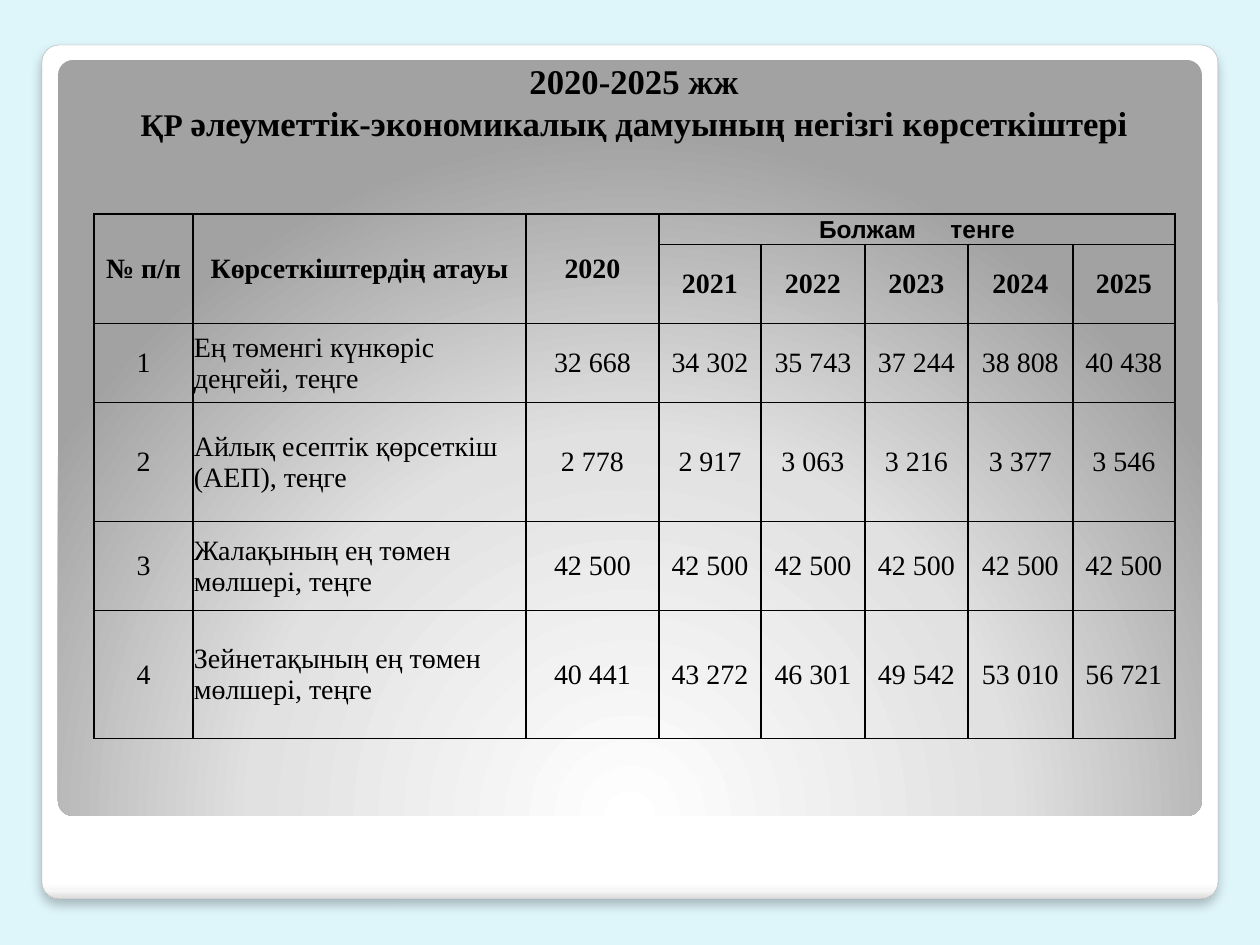
import pptx
import pptx.dml.color
import pptx.enum.shapes
import pptx.enum.text
import pptx.oxml
import pptx.oxml.ns
import pptx.util

px = 914400 // 126
namespace = pptx.oxml.ns.nsdecls("a")
center = pptx.enum.text.PP_ALIGN.CENTER
left = pptx.enum.text.PP_ALIGN.LEFT
middle = pptx.enum.text.MSO_ANCHOR.MIDDLE


def color(value):
    return pptx.dml.color.RGBColor.from_string(value)


def write(para, text, size, bold, name="Times New Roman"):
    span = para.add_run()
    span.text = text
    style = {"size": pptx.util.Pt(size), "bold": bold, "name": name}
    for key, value in style.items():
        setattr(span.font, key, value)
    span.font.color.rgb = color("000000")
    return span


deck = pptx.Presentation()
deck.slide_width = 1260 * px
deck.slide_height = 945 * px
page = deck.slides.add_slide(deck.slide_layouts[6])
page.background.fill.solid()
page.background.fill.fore_color.rgb = color("DEF5FA")

panels = [
    ((42, 45, 1176, 854),
     [(0, "FFFFFF"), (98, "FFFFFF"), (99, "F7F7F7"), (100, "DADADA")],
     '<a:lin ang="5400000" scaled="0"/>'),
    ((58, 60, 1144, 756),
     [(0, "FFFFFF"), (55, "E1E1E1"), (100, "A2A2A2")],
     '<a:path path="circle"><a:fillToRect l="50000" t="175000" r="50000" b="-75000"/></a:path>'),
]
shapes = []
for place, stops, direction in panels:
    panel = page.shapes.add_shape(
        pptx.enum.shapes.MSO_SHAPE.ROUNDED_RECTANGLE, *[value * px for value in place])
    panel.adjustments[0] = 0.02
    panel.shadow.inherit = False
    panel.line.fill.background()
    stop_xml = "".join(
        f'<a:gs pos="{position * 1000}"><a:srgbClr val="{shade}"/></a:gs>'
        for position, shade in stops)
    panel.element.spPr.insert(2, pptx.oxml.parse_xml(
        f'<a:gradFill {namespace} rotWithShape="1"><a:gsLst>{stop_xml}</a:gsLst>'
        f'{direction}</a:gradFill>'))
    shapes.append(panel)

frame = shapes[0]
frame.line.color.rgb = color("A4A4A4")
frame.line.width = pptx.util.Pt(0.16)
effects = frame.element.spPr.find(pptx.oxml.ns.qn("a:effectLst"))
effects.append(pptx.oxml.parse_xml(
    f'<a:outerShdw {namespace} blurRad="76200" dist="50800" dir="5400000" algn="tl" '
    'rotWithShape="0"><a:srgbClr val="000000"><a:alpha val="25000"/></a:srgbClr></a:outerShdw>'))

title = page.shapes.add_textbox(67 * px, 60 * px, 1134 * px, 84 * px).text_frame
title.word_wrap = True
for side in ("left", "right", "top", "bottom"):
    setattr(title, f"margin_{side}", 0)
title_lines = [
    [("2020-2025 жж", 19.8)],
    [("ҚР ", 18), ("әлеуметтік-экономикалық дамуының негізгі көрсеткіштері", 19.8)],
]
for index, pieces in enumerate(title_lines):
    para = title.add_paragraph() if index else title.paragraphs[0]
    para.alignment = center
    for text, size in pieces:
        write(para, text, size, True)

rows = [
    ["№ п/п", "Көрсеткіштердің атауы", "2020", "Болжам", "", "", "", ""],
    ["", "", "", "2021", "2022", "2023", "2024", "2025"],
    ["1", "Ең төменгі күнкөріс деңгейі, теңге",
     "32 668", "34 302", "35 743", "37 244", "38 808", "40 438"],
    ["2", "Айлық есептік қөрсеткіш (АЕП), теңге",
     "2 778", "2 917", "3 063", "3 216", "3 377", "3 546"],
    ["3", "Жалақының ең төмен мөлшері, теңге"] + ["42 500"] * 6,
    ["4", "Зейнетақының ең төмен мөлшері, теңге",
     "40 441", "43 272", "46 301", "49 542", "53 010", "56 721"],
]
widths = [99, 333, 133, 102, 104, 103, 105, 102]
heights = [29, 79, 79, 119, 89, 128]
holder = page.shapes.add_table(
    len(rows), len(widths), 94 * px, 214 * px, sum(widths) * px, sum(heights) * px)
table = holder.table
table.first_row = False
table.horz_banding = False
for column, width in zip(table.columns, widths):
    column.width = width * px
for row, height in zip(table.rows, heights):
    row.height = height * px

cell_format = {"margin_left": px, "margin_right": px, "margin_top": px,
               "margin_bottom": 0, "vertical_anchor": middle}
for row_index, texts in enumerate(rows):
    for column_index, text in enumerate(texts):
        cell = table.cell(row_index, column_index)
        for key, value in cell_format.items():
            setattr(cell, key, value)
        properties = cell._tc.get_or_add_tcPr()
        for edge in ("lnL", "lnR", "lnT", "lnB"):
            properties.append(pptx.oxml.parse_xml(
                f'<a:{edge} {namespace} w="12700"><a:solidFill>'
                f'<a:srgbClr val="000000"/></a:solidFill></a:{edge}>'))
        cell.fill.background()
        para = cell.text_frame.paragraphs[0]
        para.alignment = left if column_index == 1 and row_index > 1 else center
        if text == "Болжам":
            write(para, text, 14, True, "Arial")
            gap = write(para, " ", 14, True, "Arial")
            gap.font._element.set("spc", "1560")
            write(para, "тенге", 14, True, "Arial")
        elif text:
            write(para, text, 16, row_index < 2)
        else:
            para.font.size = pptx.util.Pt(14)

for column_index in range(3):
    table.cell(0, column_index).merge(table.cell(1, column_index))
table.cell(0, 3).merge(table.cell(0, 7))

deck.save("out.pptx")
